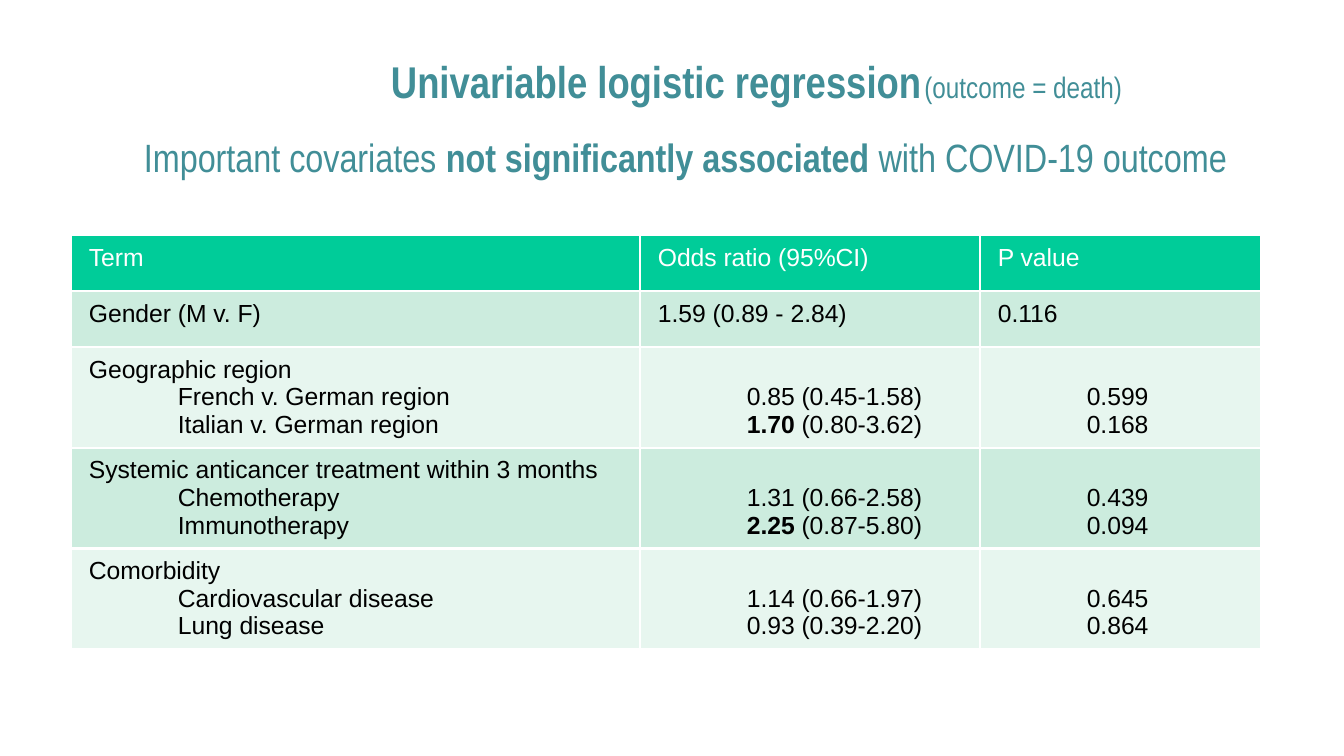
from lxml import etree
from pptx import Presentation
from pptx.dml.color import RGBColor
from pptx.enum.text import MSO_ANCHOR as ANCHOR, MSO_AUTO_SIZE as AUTO, PP_ALIGN as ALIGN
from pptx.oxml.ns import qn
from pptx.util import Pt

# Content: a paragraph is a list of (text, bold) runs or (text, bold, size)
TITLE = [("Univariable logistic regression", True), ("\t", False),
         ("(outcome = death)", False, 12)]
SUBTITLE = [("Important covariates ", False), ("not significantly associated ", True),
            ("with COVID-19 outcome", False)]
HEADER = ["Term", "Odds ratio (95%CI)", "P value"]
GENDER = ["Gender (M v. F)", "1.59 (0.89 - 2.84)", "0.116"]
# Group name, then (term, odds ratio, interval, P value, ratio in bold)
GROUPS = [
    ("Geographic region", [
        ("French v. German region", "0.85", "(0.45-1.58)", "0.599", False),
        ("Italian v. German region", "1.70", "(0.80-3.62)", "0.168", True)]),
    ("Systemic anticancer treatment within 3 months", [
        ("Chemotherapy", "1.31", "(0.66-2.58)", "0.439", False),
        ("Immunotherapy", "2.25", "(0.87-5.80)", "0.094", True)]),
    ("Comorbidity", [
        ("Cardiovascular disease", "1.14", "(0.66-1.97)", "0.645", False),
        ("Lung disease", "0.93", "(0.39-2.20)", "0.864", False)]),
]

# Geometry in px
SLIDE = (1344, 756)
TITLE_BOX = (373, 50, 916, 55)
SUBTITLE_BOX = (126, 128, 1120, 55)
TABLE_LEFT, TABLE_TOP = 71, 235
COLUMNS = [569, 340, 281]
LINE_ROW, GROUP_ROW = 56, 100
PAD_X, PAD_Y, INDENT, TITLE_TAB = 18, 9, 89, 551

TEAL, GREEN, WHITE, BLACK = "418E97", "00CC99", "FFFFFF", "000000"
BANDS = ["CCECDE", "E7F6EF"]


def px(n):
    return round(n * 5143)


def rgb(color):
    return RGBColor.from_string(color)


def add_text(p, runs, size=10, font="Arial", color=BLACK):
    for text, bold, *own_size in runs:
        r = p.add_run()
        r.text = text
        r.font.name, r.font.bold = font, bold
        r.font.size = Pt(own_size[0] if own_size else size)
        r.font.color.rgb = rgb(color)


def fill_heading(sp, box, runs, size, tab=None):
    sp.left, sp.top, sp.width, sp.height = map(px, box)
    tf = sp.text_frame
    tf.word_wrap, tf.auto_size, tf.vertical_anchor = True, AUTO.NONE, ANCHOR.TOP
    tf.margin_left = tf.margin_right = px(PAD_X)
    tf.margin_top = tf.margin_bottom = px(PAD_Y)
    p = tf.paragraphs[0]
    p.alignment, p.line_spacing = ALIGN.LEFT, 0.93
    p.space_before, p.space_after = Pt(0), Pt(7.2)
    pPr = p._p.get_or_add_pPr()
    pPr.set("marL", "0")
    pPr.set("indent", "0")
    etree.SubElement(pPr, qn("a:buNone"))
    if tab:
        stops = etree.SubElement(pPr, qn("a:tabLst"))
        etree.SubElement(stops, qn("a:tab"), pos=str(px(tab)), algn="l")
    add_text(p, runs, size=size, font="Arial Narrow", color=TEAL)


def add_borders(cell):
    tcPr = cell._tc.get_or_add_tcPr()
    for i, side in enumerate(("a:lnL", "a:lnR", "a:lnT", "a:lnB")):
        ln = etree.Element(qn(side), w=str(Pt(1)))
        solid = etree.SubElement(ln, qn("a:solidFill"))
        etree.SubElement(solid, qn("a:srgbClr"), val=WHITE)
        tcPr.insert(i, ln)


def fill_cell(cell, paragraphs, fill, color, anchor):
    cell.fill.solid()
    cell.fill.fore_color.rgb = rgb(fill)
    add_borders(cell)
    cell.margin_left = cell.margin_right = px(PAD_X)
    cell.margin_top = cell.margin_bottom = px(PAD_Y)
    cell.vertical_anchor = anchor
    tf = cell.text_frame
    for i, (runs, indented) in enumerate(paragraphs):
        p = tf.add_paragraph() if i else tf.paragraphs[0]
        if indented:
            p._p.get_or_add_pPr().set("marL", str(px(INDENT)))
        add_text(p, runs, color=color)


def line_row(texts):
    return [[([(text, False)], False)] for text in texts]


def group_row(name, items):
    terms = [([(name, False)], False)]
    ratios, p_values = [], []
    for term, ratio, interval, p_value, bold in items:
        terms.append(([(term, False)], True))
        ratios.append(([(ratio, bold), (" " + interval, False)], True))
        p_values.append(([(p_value, False)], True))
    return [terms, ratios, p_values]


def main():
    prs = Presentation()
    prs.slide_width, prs.slide_height = map(px, SLIDE)
    s = prs.slides.add_slide(prs.slide_layouts[1])

    # Headings
    fill_heading(s.shapes.title, TITLE_BOX, TITLE, 18, tab=TITLE_TAB)
    fill_heading(s.placeholders[1], SUBTITLE_BOX, SUBTITLE, 16)

    # Table
    rows = [line_row(HEADER), line_row(GENDER)] + [group_row(*g) for g in GROUPS]
    heights = [LINE_ROW] * 2 + [GROUP_ROW] * len(GROUPS)
    table = s.shapes.add_table(len(rows), len(COLUMNS), px(TABLE_LEFT), px(TABLE_TOP),
                               px(sum(COLUMNS)), px(sum(heights))).table
    for column, width in zip(table.columns, COLUMNS):
        column.width = px(width)
    for i, (row, height) in enumerate(zip(rows, heights)):
        table.rows[i].height = px(height)
        fill, color = (BANDS[(i - 1) % 2], BLACK) if i else (GREEN, WHITE)
        # Group values sit at the bottom, level with their terms
        for j, paragraphs in enumerate(row):
            anchor = ANCHOR.BOTTOM if i > 1 and j else ANCHOR.TOP
            fill_cell(table.cell(i, j), paragraphs, fill, color, anchor)

    prs.save("out.pptx")


if __name__ == "__main__":
    main()
